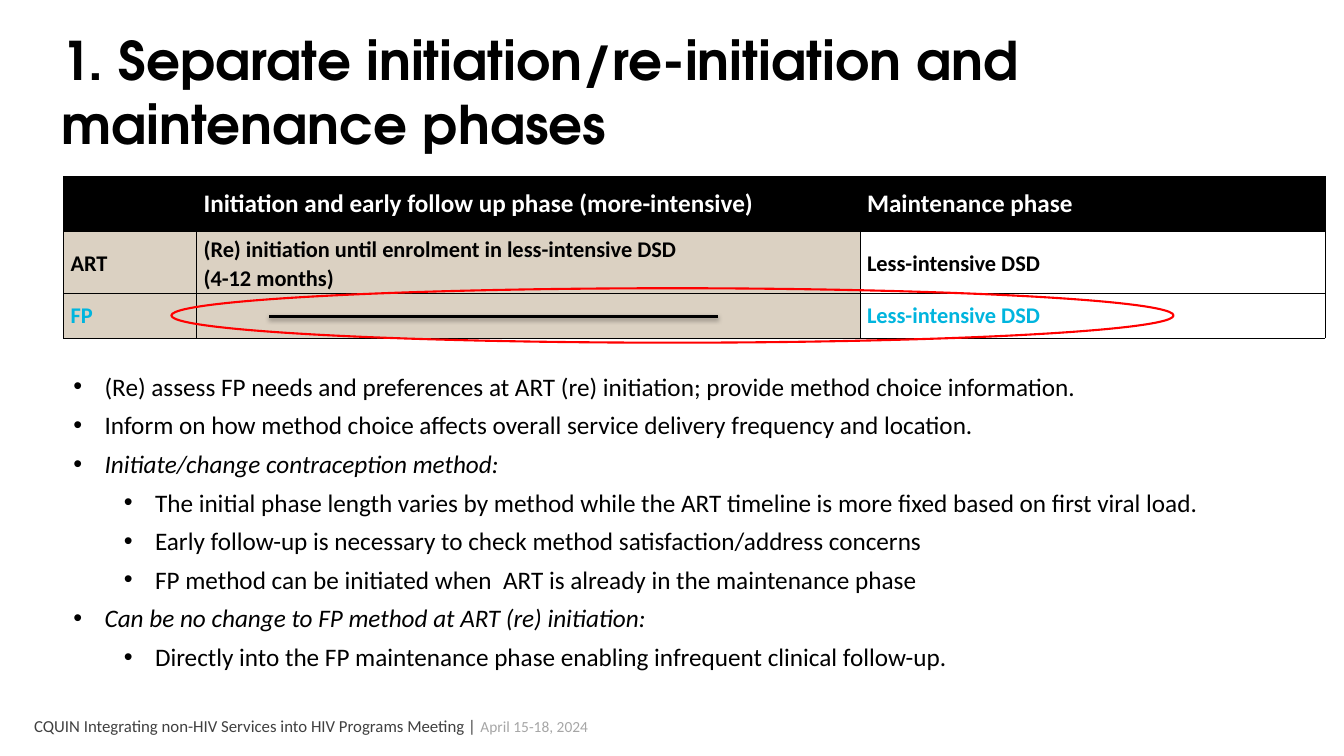
from pptx import Presentation
from pptx.dml.color import RGBColor
from pptx.enum.shapes import MSO_CONNECTOR, MSO_SHAPE
from pptx.enum.text import MSO_ANCHOR, MSO_AUTO_SIZE, PP_ALIGN
from pptx.oxml import parse_xml
from pptx.oxml.ns import nsdecls
from pptx.util import Inches, Pt


def hue(code):
    return RGBColor.from_string(code)


def write(para, text, size=18, color="000000", bold=False, italic=False, face="Calibri"):
    run = para.add_run()
    run.text = text
    font = run.font
    font.name, font.size = face, Pt(size)
    font.bold, font.italic = bold, italic
    font.color.rgb = hue(color)


deck = Presentation()
deck.slide_width, deck.slide_height = Inches(13.33), Inches(7.5)
slide = deck.slides.add_slide(deck.slide_layouts[5])
shapes = slide.shapes

title = shapes.title
title.left, title.top = Inches(0.51), Inches(0.22)
title.width, title.height = Inches(12.31), Inches(1.38)
frame = title.text_frame
frame.word_wrap = True
frame.auto_size = MSO_AUTO_SIZE.NONE
frame.vertical_anchor = MSO_ANCHOR.TOP
frame.paragraphs[0].alignment = PP_ALIGN.LEFT
write(frame.paragraphs[0], "1. Separate initiation/re-initiation and maintenance phases",
      size=38, bold=True, face="TeX Gyre Adventor")

foot = shapes.add_textbox(Inches(0.24), Inches(7), Inches(6.9), Inches(0.4)).text_frame
foot.word_wrap = True
foot.vertical_anchor = MSO_ANCHOR.MIDDLE
write(foot.paragraphs[0], "CQUIN Integrating non-HIV Services into HIV Programs Meeting | ",
      size=12, color="404040")
write(foot.paragraphs[0], "April 15-18, 2024", size=11, color="A6A6A6")

black = ["000000"] * 3
sand = ["DBD1C2", "DBD1C2", "FFFFFF"]
phases = [
    (0.54, 18, "FFFFFF", black,
     ["", "Initiation and early follow up phase (more-intensive)", "Maintenance phase"]),
    (0.62, 16, "000000", sand,
     ["ART", "(Re) initiation until enrolment in less-intensive DSD\n(4-12 months)",
      "Less-intensive DSD"]),
]
method = [(0.44, 16, "00B5DE", sand, ["FP", "", "Less-intensive DSD"])]

for top, rows in [(1.75, phases), (2.91, method)]:
    high = sum(row[0] for row in rows)
    grid = shapes.add_table(len(rows), 3, Inches(0.63), Inches(top),
                            Inches(12.51), Inches(high)).table
    grid.first_row = grid.horz_banding = False
    for col, wide in zip(grid.columns, [1.32, 6.58, 4.61]):
        col.width = Inches(wide)
    for r, (tall, size, color, fills, texts) in enumerate(rows):
        grid.rows[r].height = Inches(tall)
        for c, text in enumerate(texts):
            cell = grid.cell(r, c)
            cell.vertical_anchor = MSO_ANCHOR.MIDDLE
            cell.margin_left = cell.margin_right = Inches(0.07)
            cell.margin_top = cell.margin_bottom = Inches(0.04)
            for n, line in enumerate(text.split("\n")):
                para = cell.text_frame.add_paragraph() if n else cell.text_frame.paragraphs[0]
                para.line_spacing = 1.05
                if line:
                    write(para, line, size=size, color=color, bold=True)
            props = cell._tc.get_or_add_tcPr()
            for side in ["lnL", "lnR", "lnT", "lnB"]:
                props.append(parse_xml(
                    f'<a:{side} {nsdecls("a")} w="3175"><a:solidFill>'
                    f'<a:srgbClr val="000000"/></a:solidFill></a:{side}>'))
            cell.fill.solid()
            cell.fill.fore_color.rgb = hue(fills[c])

points = [
    (0, False, "(Re) assess FP needs and preferences at ART (re) initiation; provide method choice information."),
    (0, False, "Inform on how method choice affects overall service delivery frequency and location."),
    (0, True, "Initiate/change contraception method:"),
    (1, False, "The initial phase length varies by method while the ART timeline is more fixed based on first viral load."),
    (1, False, "Early follow-up is necessary to check method satisfaction/address concerns"),
    (1, False, "FP method can be initiated when  ART is already in the maintenance phase"),
    (0, True, "Can be no change to FP method at ART (re) initiation:"),
    (1, False, "Directly into the FP maintenance phase enabling infrequent clinical follow-up."),
]
body = shapes.add_textbox(Inches(0.63), Inches(3.63), Inches(12.5), Inches(3.11)).text_frame
body.word_wrap = True
for n, (level, italic, text) in enumerate(points):
    para = body.add_paragraph() if n else body.paragraphs[0]
    props = para._p.get_or_add_pPr()
    props.set("marL", str(Inches(0.31 + 0.5 * level)))
    props.set("indent", str(-Inches(0.31)))
    props.append(parse_xml(f'<a:buFont {nsdecls("a")} typeface="Arial"/>'))
    props.append(parse_xml(f'<a:buChar {nsdecls("a")} char="•"/>'))
    para.level = level
    para.space_after = Pt(6)
    write(para, text, italic=italic)

dash = shapes.add_connector(MSO_CONNECTOR.STRAIGHT, Inches(2.67), Inches(3.14),
                            Inches(7.12), Inches(3.14))
dash.line.color.rgb = hue("000000")
dash.line.width = Pt(2)
dash._element.spPr.append(parse_xml(
    f'<a:effectLst {nsdecls("a")}><a:outerShdw blurRad="39370" dist="20320" dir="5400000" '
    'rotWithShape="0"><a:srgbClr val="000000"><a:alpha val="38000"/></a:srgbClr>'
    '</a:outerShdw></a:effectLst>'))

ring = shapes.add_shape(MSO_SHAPE.OVAL, Inches(1.7), Inches(2.86), Inches(9.94), Inches(0.54))
ring.shadow.inherit = False
ring.fill.background()
ring.line.color.rgb = hue("FF0000")
ring.line.width = Pt(1.5)

deck.save("out.pptx")
